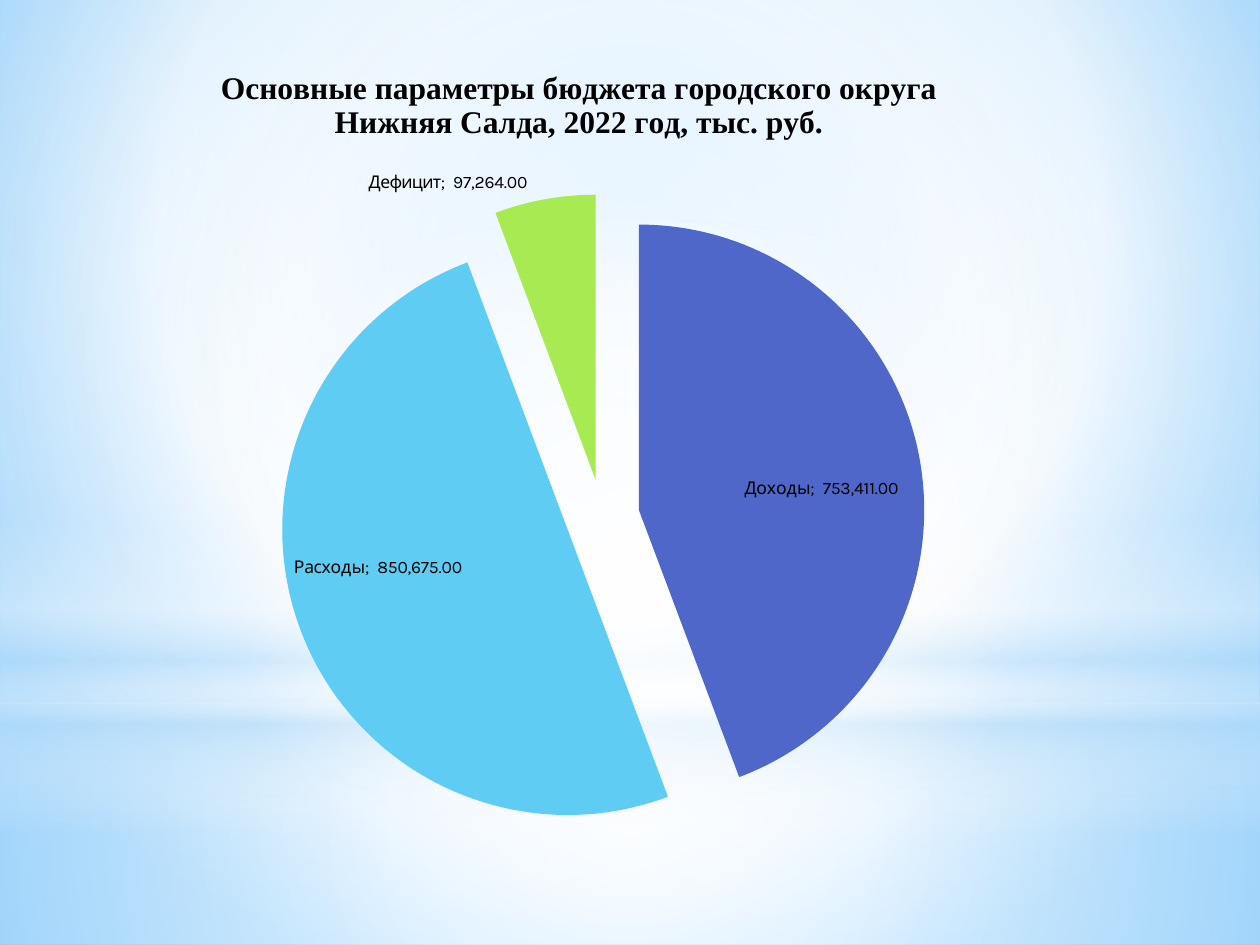
from lxml import etree
from pptx import Presentation
from pptx.chart.data import CategoryChartData
from pptx.dml.color import RGBColor
from pptx.enum.chart import XL_CHART_TYPE, XL_LABEL_POSITION
from pptx.enum.shapes import MSO_SHAPE
from pptx.oxml import parse_xml
from pptx.oxml.ns import nsdecls, qn
from pptx.util import Inches, Pt

PIE = XL_CHART_TYPE.PIE
BEST_FIT = XL_LABEL_POSITION.BEST_FIT
RECTANGLE = MSO_SHAPE.RECTANGLE
OVAL = MSO_SHAPE.OVAL

COLORS = {
    "white": "FFFFFF", "haze": "B4DCFA", "sky": "9ED5FF", "deep": "5BB9FF",
    "text": "000000", "Доходы": "4E67C8", "Расходы": "5ECCF3", "Дефицит": "A7EA52",
}
TITLE = "Основные параметры бюджета городского округа Нижняя Салда, 2022 год, тыс. руб."
BUDGET = {"Доходы": 753411, "Расходы": 850675, "Дефицит": 97264}
NUMBER_FORMAT = "_-* #,##0.00_р_._-;\\-* #,##0.00_р_._-;_-"
CENTER = (50, 50, 50, 50)


def fill_gradient(properties, stops, focus):
    marks = "".join(
        f'<a:gs pos="{place * 1000}"><a:srgbClr val="{COLORS[color]}">'
        f'<a:alpha val="{alpha * 1000}"/></a:srgbClr></a:gs>'
        for place, color, alpha in stops
    )
    if focus:
        sides = " ".join(f'{side}="{share * 1000}"' for side, share in zip("ltrb", focus))
        direction = f'<a:path path="circle"><a:fillToRect {sides}/></a:path>'
    else:
        direction = '<a:lin ang="5400000" scaled="0"/>'
    gradient = parse_xml(
        f'<a:gradFill {nsdecls("a")} rotWithShape="1"><a:gsLst>{marks}</a:gsLst>{direction}</a:gradFill>'
    )
    properties.replace(properties.find(qn("a:noFill")), gradient)


def style_font(font, name, size, bold):
    font.name = name
    font.size = Pt(size)
    font.bold = bold
    font.color.rgb = RGBColor.from_string(COLORS["text"])


deck = Presentation()
deck.slide_width = Inches(10)
deck.slide_height = Inches(7.5)
page = deck.slides.add_slide(deck.slide_layouts[6])

page.background.fill.background()
fill_gradient(
    page.element.find(".//" + qn("p:bgPr")),
    [(0, "sky", 100), (60, "white", 100), (100, "deep", 100)],
    (20, 10, 20, 60),
)

glows = [
    (RECTANGLE, 5.58, 1.92, CENTER,
     [(0, "white", 91), (37, "white", 76), (100, "haze", 79)]),
    (RECTANGLE, 0, 5.58, CENTER,
     [(0, "white", 89), (48, "white", 62), (100, "haze", 79)]),
    (RECTANGLE, 4.12, 2.5, None,
     [(0, "white", 0), (29, "white", 30), (45, "haze", 40),
      (55, "white", 26), (65, "haze", 60), (100, "white", 0)]),
    (OVAL, 1.75, 5.58, CENTER, [(0, "white", 100), (56, "white", 0)]),
]
for kind, top, height, focus, stops in glows:
    glow = page.shapes.add_shape(kind, 0, Inches(top), deck.slide_width, Inches(height))
    glow.shadow.inherit = False
    glow.line.fill.background()
    glow.fill.background()
    fill_gradient(glow.element.spPr, stops, focus)

data = CategoryChartData(number_format=NUMBER_FORMAT)
data.categories = list(BUDGET)
data.add_series(TITLE, list(BUDGET.values()))
chart = page.shapes.add_chart(
    PIE, Inches(0.86), Inches(0.31), Inches(7.47), Inches(6.48), data
).chart
style_font(chart.font, "Karla", 18, False)
chart.has_legend = False
chart.has_title = True
chart.chart_title.text_frame.text = TITLE
chart.chart_title.include_in_layout = False
style_font(chart.chart_title.text_frame.paragraphs[0].runs[0].font, "Times New Roman", 18, True)

plot = chart.plots[0]
plot.vary_by_categories = True
series = plot.series[0]
for index, category in enumerate(BUDGET):
    wedge = series.points[index].format
    wedge.fill.solid()
    wedge.fill.fore_color.rgb = RGBColor.from_string(COLORS[category])
explosion = etree.Element(qn("c:explosion"), val="13")
series._element.find(qn("c:dPt")).addprevious(explosion)

labels = series.data_labels
labels.show_category_name = True
labels.show_value = True
labels.show_percentage = False
labels.number_format = NUMBER_FORMAT
labels.number_format_is_linked = False
labels.position = BEST_FIT
style_font(labels.font, "Karla", 10, False)

plot_area = chart._chartSpace.find(".//" + qn("c:plotArea"))
for old_layout in plot_area.findall(qn("c:layout")):
    plot_area.remove(old_layout)
frame = {"x": 0.18, "y": 0.19, "w": 0.69, "h": 0.79}
settings = "".join(f'<c:{mode}Mode val="edge"/>' for mode in "xy")
settings += "".join(f'<c:{side} val="{share}"/>' for side, share in frame.items())
plot_area.insert(0, parse_xml(
    f'<c:layout {nsdecls("c")}><c:manualLayout><c:layoutTarget val="inner"/>'
    f'{settings}</c:manualLayout></c:layout>'
))

deck.save("out.pptx")
